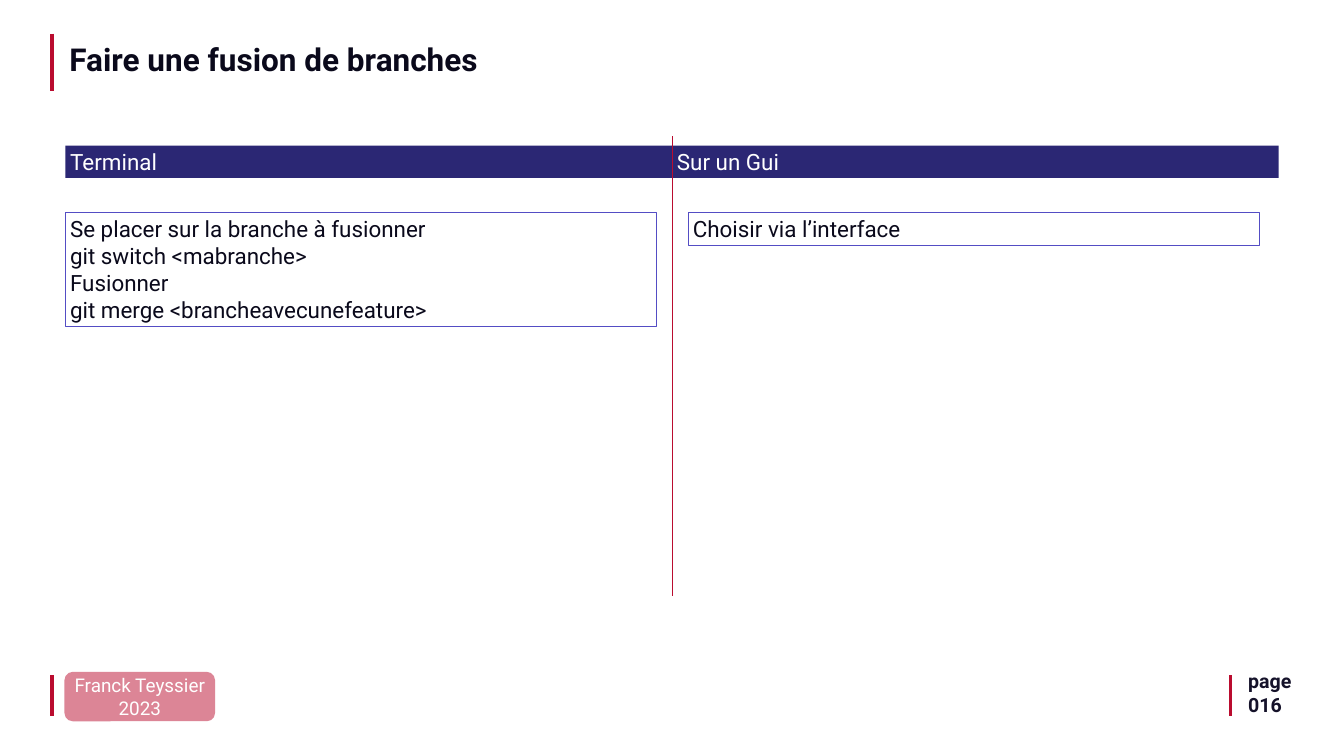
from lxml import etree
from pptx import Presentation
from pptx.dml.color import RGBColor
from pptx.enum.shapes import MSO_CONNECTOR, MSO_SHAPE
from pptx.enum.text import MSO_ANCHOR, PP_ALIGN
from pptx.oxml.ns import qn
from pptx.util import Cm, Pt

RECT, ROUND = MSO_SHAPE.RECTANGLE, MSO_SHAPE.ROUNDED_RECTANGLE
STRAIGHT = MSO_CONNECTOR.STRAIGHT
LEFT, CENTER = PP_ALIGN.LEFT, PP_ALIGN.CENTER
TOP, MIDDLE = MSO_ANCHOR.TOP, MSO_ANCHOR.MIDDLE

WHITE = RGBColor(0xFF, 0xFF, 0xFF)
RED = RGBColor(0xBA, 0x0C, 0x2F)
NAVY = RGBColor(0x2B, 0x27, 0x74)
VIOLET = RGBColor(0x54, 0x4D, 0xC4)
INK = RGBColor(0x0A, 0x09, 0x1B)
PAGE_INK = RGBColor(0x15, 0x12, 0x2A)
FONT = "Roboto"

TITLE = ["Faire une fusion de branches"]
AUTHOR = ["Franck Teyssier", "2023"]
PAGE = ["page", "016"]
COLUMNS = [
    {
        "head": "Terminal",
        "steps": [
            "Se placer sur la branche à fusionner",
            "git switch <mabranche>",
            "Fusionner",
            "git merge <brancheavecunefeature>",
        ],
        "box": (3.28, 10.72, 29.79, 5.74),
    },
    {
        "head": "Sur un Gui",
        "steps": ["Choisir via l’interface"],
        "box": (34.67, 10.72, 28.8, 1.63),
    },
]

SLIDE_W, SLIDE_H = 67.74, 38.1
MIDDLE_X = SLIDE_W / 2
COLUMN_W = 30.58
HEAD_Y, HEAD_H = 7.34, 1.63
FOOTER_Y = (34.04, 36.09)
BARS = [(2.62, *FOOTER_Y), (62.03, *FOOTER_Y), (2.62, 1.7, 4.57)]


def add_rule(slide, x, y1, y2, width):
    line = slide.shapes.add_connector(STRAIGHT, Cm(x), Cm(y1), Cm(x), Cm(y2))
    line.line.color.rgb = RED
    line.line.width = Pt(width)
    etree.SubElement(line._element.spPr, qn("a:effectLst"))


def add_text(slide, lines, box, size, color, shape=None, bold=False, fill=None,
             alpha=None, outline=None, align=LEFT, anchor=TOP, spacing=None):
    place = [Cm(v) for v in box]
    if shape is None:
        sp = slide.shapes.add_textbox(*place)
    else:
        sp = slide.shapes.add_shape(shape, *place)
        sp.shadow.inherit = False
        if fill is None:
            sp.fill.background()
        else:
            sp.fill.solid()
            sp.fill.fore_color.rgb = fill
        if alpha is not None:
            clr = sp._element.spPr.find(qn("a:solidFill"))[0]
            etree.SubElement(clr, qn("a:alpha"), val=str(alpha * 1000))
        if outline is None:
            sp.line.fill.background()
        else:
            sp.line.color.rgb = outline
            sp.line.width = Pt(0.75)
    tf = sp.text_frame
    tf.word_wrap = True
    tf.vertical_anchor = anchor
    for i, text in enumerate(lines):
        p = tf.add_paragraph() if i else tf.paragraphs[0]
        p.alignment = align
        if spacing:
            p.line_spacing = spacing
        r = p.add_run()
        r.text = text
        r.font.name = FONT
        r.font.size = Pt(size)
        r.font.bold = bold
        r.font.color.rgb = color


def main():
    prs = Presentation()
    prs.slide_width, prs.slide_height = Cm(SLIDE_W), Cm(SLIDE_H)
    s = prs.slides.add_slide(prs.slide_layouts[6])

    for x, y1, y2 in BARS:
        add_rule(s, x, y1, y2, 5)
    add_text(s, AUTHOR, (3.25, 33.86, 7.59, 2.49), 27, WHITE, shape=ROUND,
             fill=RED, alpha=50, align=CENTER, anchor=MIDDLE)
    add_text(s, TITLE, (3.25, 2.11, 34.01, 1.98), 45, INK, bold=True, spacing=0.9)

    for i, column in enumerate(COLUMNS):
        x = MIDDLE_X + (i - 1) * COLUMN_W
        add_text(s, [column["head"]], (x, HEAD_Y, COLUMN_W, HEAD_H), 32, WHITE,
                 shape=RECT, fill=NAVY)
    add_rule(s, MIDDLE_X, 6.86, 30.05, 0.5)
    for column in COLUMNS:
        add_text(s, column["steps"], column["box"], 32, INK, shape=RECT,
                 outline=VIOLET)

    add_text(s, PAGE, (62.66, 33.6, 6.43, 2.64), 28, PAGE_INK, bold=True)
    prs.save("out.pptx")


if __name__ == "__main__":
    main()
